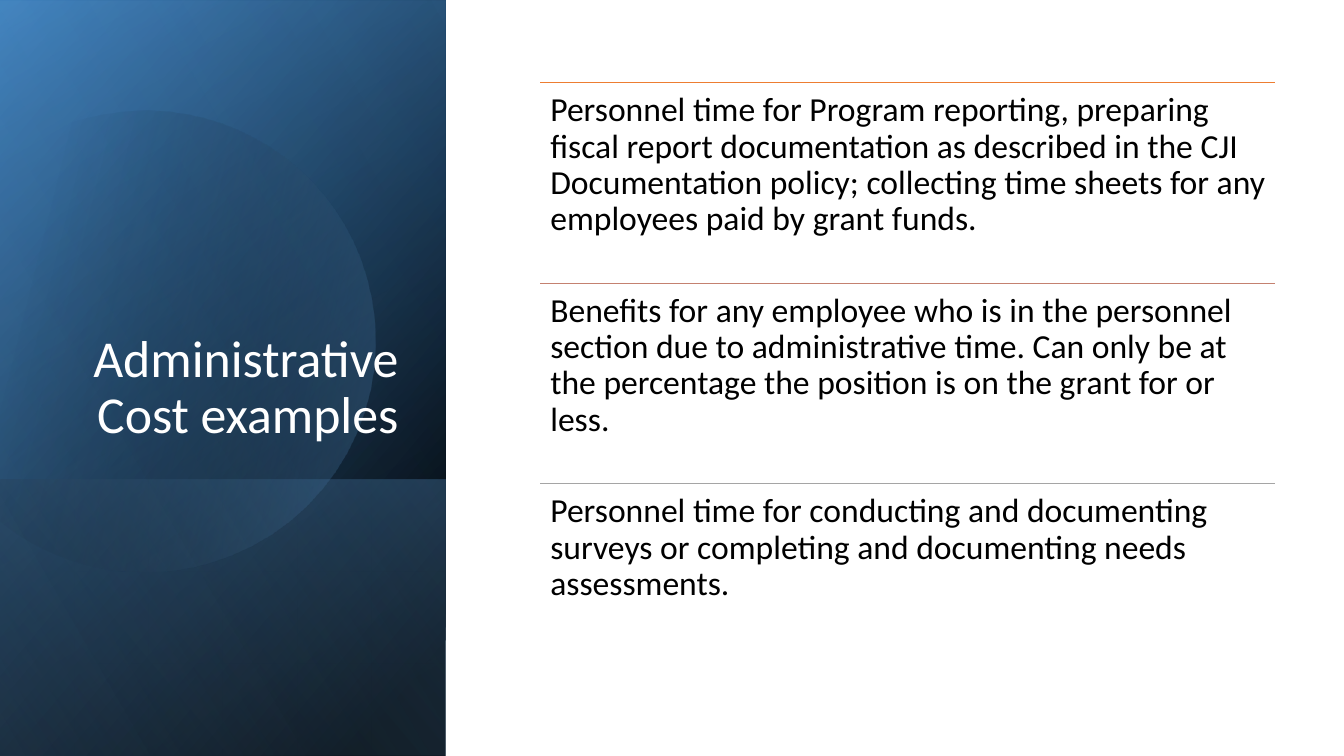
"""Build the slide of administrative cost examples."""
import math
import pptx
import pptx.dml.color
import pptx.enum.shapes
import pptx.enum.text
import pptx.oxml.ns
import pptx.util
import lxml.etree

Inches = pptx.util.Inches
Pt = pptx.util.Pt
RGB = pptx.dml.color.RGBColor.from_string
qn = pptx.oxml.ns.qn
ALIGN = pptx.enum.text.PP_ALIGN
ANCHOR = pptx.enum.text.MSO_ANCHOR

TITLE = "Administrative Cost examples"
ITEMS = [
    ("Personnel time for Program reporting, preparing fiscal report documentation "
     "as described in the CJI Documentation policy; collecting time sheets for any "
     "employees paid by grant funds.", "ED7D31"),
    ("Benefits for any employee who is in the personnel section due to "
     "administrative time. Can only be at the percentage the position is on the "
     "grant for or less.", "C48170"),
    ("Personnel time for conducting and documenting surveys or completing and "
     "documenting needs assessments.", "A5A5A5"),
]

THEME = {
    "font": "Calibri", "title": 37, "body": 24, "rule": 0.5,
    "light": "FFFFFF", "dark": "000000",
    "deep": "2E75B6", "blue": "5B9BD5", "pale": "9DC3E6",
}

SIDE = (-1.54, 1.54, 7.5, 4.42)
BASE = (0.84, 3.92, 2.74, 4.42)
BACK = [
    (SIDE, 50, [(8, "dark", 100), (100, "deep", 100)]),
    ((-1.54, 1.55, 7.5, 4.42), 30, [(0, "dark", 0), (99, "blue", 46)]),
    (BASE, 130, [(2, "blue", 29), (100, "dark", 30)]),
]
FRONT = (SIDE, 120, [(0, "dark", 0), (99, "pale", 11)])

DISC = {"mid": (1.585, 3.345), "turn": 343.9, "angle": 30,
        "stops": [(29, "dark", 0), (100, "blue", 43)]}
START = (1.49, 1.1)
ARCS = [
    [(2.46, 1.12), (3.35, 1.77), (3.63, 2.75)],
    [(3.98, 3.97), (3.28, 5.23), (2.07, 5.58)],
    [(1.31, 5.8), (0.53, 5.61), (-0.03, 5.14)],
    [(-0.15, 5.03)],
    [(-0.15, 1.75)],
    [(0, 1.61)],
    [(0.23, 1.42), (0.5, 1.28), (0.8, 1.19)],
    [(1.03, 1.13), (1.26, 1.1), (1.49, 1.1)],
]
STEPS = 16

TITLE_BOX = (0.64, 1.84, 3.41, 2.62)
LIST = {"left": 5.36, "top": 0.82, "width": 7.29, "pitch": 1.99}


def apply(thing, values):
    """Set each named attribute."""
    for name, value in values.items():
        setattr(thing, name, value)


def shade(shape, angle, stops):
    """Fill a shape with a two-stop gradient and no outline."""
    shape.shadow.inherit = False
    shape.line.fill.background()
    shape.fill.gradient()
    shape.fill.gradient_angle = 360 - angle
    for stop, (place, tone, _) in zip(shape.fill.gradient_stops, stops):
        stop.color.rgb = RGB(THEME[tone])
        stop.position = place / 100
    grad = shape.element.spPr.find(qn("a:gradFill"))
    for tint, (_, _, alpha) in zip(grad.iter(qn("a:srgbClr")), stops):
        if alpha < 100:
            lxml.etree.SubElement(tint, qn("a:alpha")).set("val", str(alpha * 1000))


def panel(shapes, box, angle, stops):
    """Add a turned and flipped gradient panel."""
    kind = pptx.enum.shapes.MSO_SHAPE.RECTANGLE
    shape = shapes.add_shape(kind, *map(Inches, box))
    shape.rotation = 90
    shape.element.spPr.xfrm.set("flipH", "1")
    shade(shape, angle, stops)


def trace():
    """Return the disc outline as closely spaced points."""
    points = [START]
    for arc in ARCS:
        if len(arc) == 1:
            points += arc
            continue
        a, b, c, d = zip(points[-1], *arc), None, None, None
        axes = list(a)
        for step in range(1, STEPS + 1):
            t = step / STEPS
            u = 1 - t
            mix = (u ** 3, 3 * u * u * t, 3 * u * t * t, t ** 3)
            points.append(tuple(sum(m * v for m, v in zip(mix, axis)) for axis in axes))
    return points


def disc(shapes):
    """Add the clipped disc, laid out upright and then turned."""
    turn = math.radians(360 - DISC["turn"])
    cos, sin = math.cos(turn), math.sin(turn)
    mid_x, mid_y = DISC["mid"]
    spots = []
    for x, y in trace():
        dx, dy = x - mid_x, y - mid_y
        spots.append((Inches(mid_x + dx * cos - dy * sin),
                      Inches(mid_y + dx * sin + dy * cos)))
    pen = shapes.build_freeform(*spots[0], scale=1.0)
    pen.add_line_segments(spots[1:], close=True)
    shape = pen.convert_to_shape()
    shape.rotation = DISC["turn"]
    shade(shape, DISC["angle"], DISC["stops"])


def write(shapes, box, text, size, tone, frame, para):
    """Add a wrapped text box."""
    body = shapes.add_textbox(*map(Inches, box)).text_frame
    apply(body, {"word_wrap": True, **frame})
    line = body.paragraphs[0]
    apply(line, {"line_spacing": 0.9, **para})
    run = line.add_run()
    run.text = text
    apply(run.font, {"name": THEME["font"], "size": Pt(THEME[size])})
    run.font.color.rgb = RGB(THEME[tone])


def rule(shapes, left, right, y, tone):
    """Add a thin level line."""
    kind = pptx.enum.shapes.MSO_CONNECTOR.STRAIGHT
    line = shapes.add_connector(kind, *map(Inches, (left, y, right, y)))
    line.line.color.rgb = RGB(tone)
    line.line.width = Pt(THEME["rule"])
    lxml.etree.SubElement(line.element.spPr, qn("a:effectLst"))


def main():
    """Compose and save the slide."""
    deck = pptx.Presentation()
    apply(deck, {"slide_width": Inches(13.33), "slide_height": Inches(7.5)})
    shapes = deck.slides.add_slide(deck.slide_layouts[6]).shapes
    for item in BACK:
        panel(shapes, *item)
    disc(shapes)
    panel(shapes, *FRONT)
    write(shapes, TITLE_BOX, TITLE, "title", "light",
          {"vertical_anchor": ANCHOR.BOTTOM}, {"alignment": ALIGN.RIGHT})
    group = shapes.add_group_shape().shapes
    sides = ("left", "right", "top", "bottom")
    inset = {"margin_" + side: Inches(0.1) for side in sides}
    left, width, pitch = LIST["left"], LIST["width"], LIST["pitch"]
    for row, (text, tone) in enumerate(ITEMS):
        top = LIST["top"] + row * pitch
        rule(group, left, left + width, top, tone)
        write(group, (left, top, width, pitch), text, "body", "dark", inset,
              {"alignment": ALIGN.LEFT})
    deck.save("out.pptx")


if __name__ == "__main__":
    main()
